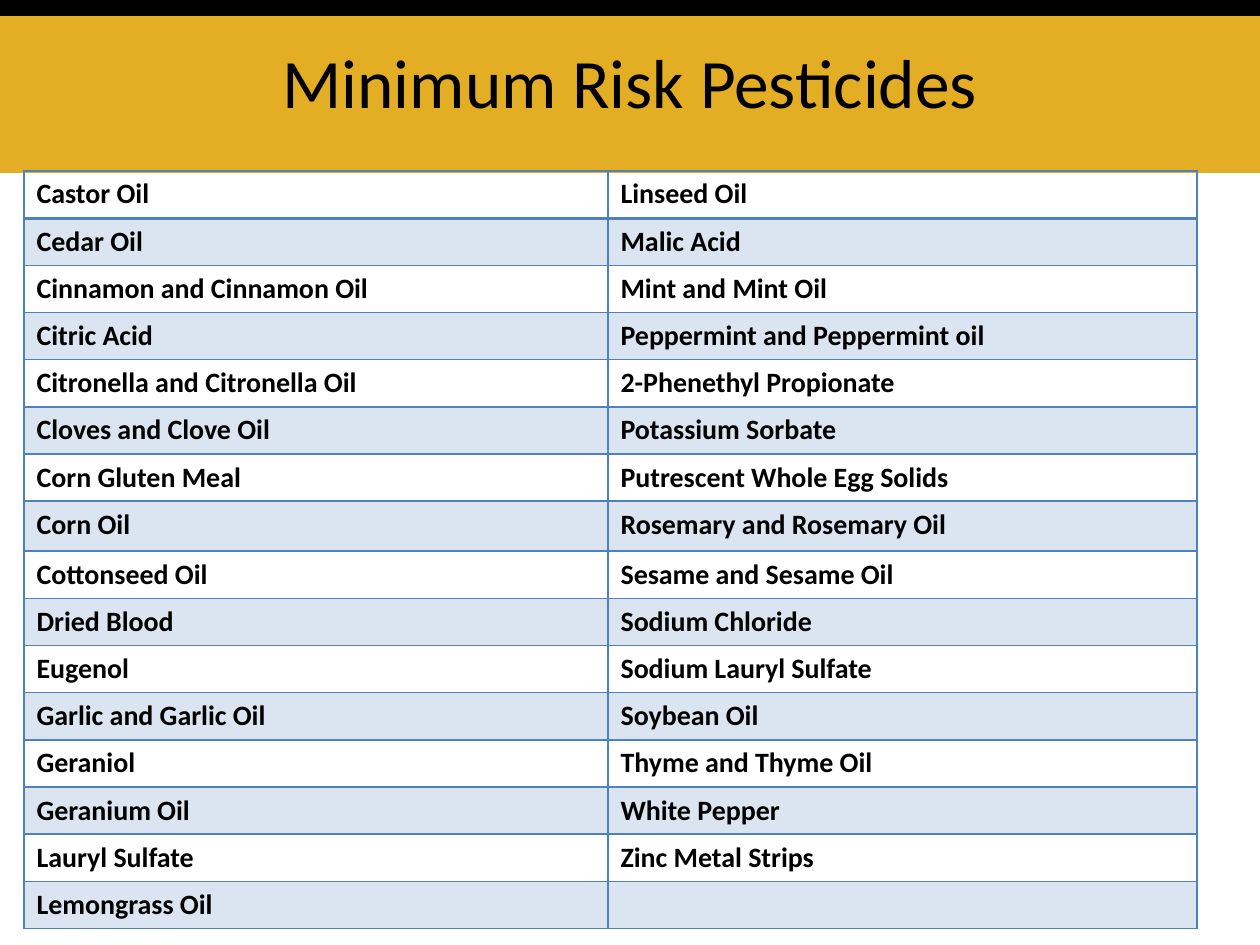
from lxml import etree
from pptx import Presentation
from pptx.dml.color import RGBColor
from pptx.enum.shapes import MSO_SHAPE
from pptx.enum.text import MSO_ANCHOR, PP_ALIGN
from pptx.oxml.ns import qn
from pptx.util import Emu, Pt

RECT = MSO_SHAPE.RECTANGLE
TOP = MSO_ANCHOR.TOP
CENTER = PP_ALIGN.CENTER

TITLE = "Minimum Risk Pesticides"
PESTICIDES = [
    ("Castor Oil", "Linseed Oil"),
    ("Cedar Oil", "Malic Acid"),
    ("Cinnamon and Cinnamon Oil", "Mint and Mint Oil"),
    ("Citric Acid", "Peppermint and Peppermint oil"),
    ("Citronella and Citronella Oil", "2-Phenethyl Propionate"),
    ("Cloves and Clove Oil", "Potassium Sorbate"),
    ("Corn Gluten Meal", "Putrescent Whole Egg Solids"),
    ("Corn Oil", "Rosemary and Rosemary Oil"),
    ("Cottonseed Oil", "Sesame and Sesame Oil"),
    ("Dried Blood", "Sodium Chloride"),
    ("Eugenol", "Sodium Lauryl Sulfate"),
    ("Garlic and Garlic Oil", "Soybean Oil"),
    ("Geraniol", "Thyme and Thyme Oil"),
    ("Geranium Oil", "White Pepper"),
    ("Lauryl Sulfate", "Zinc Metal Strips"),
    ("Lemongrass Oil", ""),
]
BANDS = [((0, 16, 1260, 157), "E3AE24"), ((0, 0, 1260, 16), "000000")]
FONT, BLACK, BLUE = "Calibri", "000000", "4F81BD"
TABLE_LEFT, TABLE_TOP, TABLE_HEIGHT = 24, 171, 758
COLUMNS = [584, 589]
TALL_ROW, TALL_HEIGHT = 7, 50
BODY_SIZE = 16


def px(n):
    return Emu(round(n * 914400 / 126))


def rgb(color):
    return RGBColor.from_string(color)


def add_run(p, text, size, bold=False):
    r = p.add_run()
    r.text = text
    r.font.name, r.font.size, r.font.bold = FONT, Pt(size), bold
    r.font.color.rgb = rgb(BLACK)


def add_border(cell, side, points):
    ln = etree.SubElement(cell._tc.get_or_add_tcPr(), qn(f"a:ln{side}"), w=str(Pt(points)))
    fill = etree.SubElement(ln, qn("a:solidFill"))
    etree.SubElement(fill, qn("a:srgbClr"), val=BLUE)


def fill_cell(cell, shaded):
    """Tint a shaded cell with 20% blue and leave the others clear."""
    if not shaded:
        cell.fill.background()
        return
    cell.fill.solid()
    cell.fill.fore_color.rgb = rgb(BLUE)
    color = cell._tc.tcPr.find(qn("a:solidFill")).find(qn("a:srgbClr"))
    etree.SubElement(color, qn("a:alpha"), val="20000")


prs = Presentation()
prs.slide_width, prs.slide_height = px(1260), px(945)
s = prs.slides.add_slide(prs.slide_layouts[6])

for box, color in BANDS:
    sp = s.shapes.add_shape(RECT, *map(px, box))
    sp.shadow.inherit = False
    sp.fill.solid()
    sp.fill.fore_color.rgb = rgb(color)
    sp.line.fill.background()

tf = s.shapes.add_textbox(px(63), px(29), px(1134), px(83)).text_frame
tf.word_wrap = True
tf.vertical_anchor = TOP
tf.margin_top, tf.margin_bottom = px(10), 0
tf.paragraphs[0].alignment = CENTER
add_run(tf.paragraphs[0], TITLE, 39.6)

table = s.shapes.add_table(
    len(PESTICIDES), len(COLUMNS), px(TABLE_LEFT), px(TABLE_TOP),
    px(sum(COLUMNS)), px(TABLE_HEIGHT)).table
table.first_row = table.horz_banding = False
for column, width in zip(table.columns, COLUMNS):
    column.width = px(width)
row_height = (TABLE_HEIGHT - TALL_HEIGHT) / (len(PESTICIDES) - 1)

for i, names in enumerate(PESTICIDES):
    table.rows[i].height = px(TALL_HEIGHT if i == TALL_ROW else row_height)
    for j, name in enumerate(names):
        cell = table.cell(i, j)
        p = cell.text_frame.paragraphs[0]
        if name:
            add_run(p, name, BODY_SIZE, bold=True)
        else:
            etree.SubElement(p._p, qn("a:endParaRPr"), sz=str(BODY_SIZE * 100))
        for side in "LRTB":
            under_header = (i, side) in [(0, "B"), (1, "T")]
            add_border(cell, side, 2 if under_header else 1)
        fill_cell(cell, shaded=i % 2 == 1)

prs.save("out.pptx")
